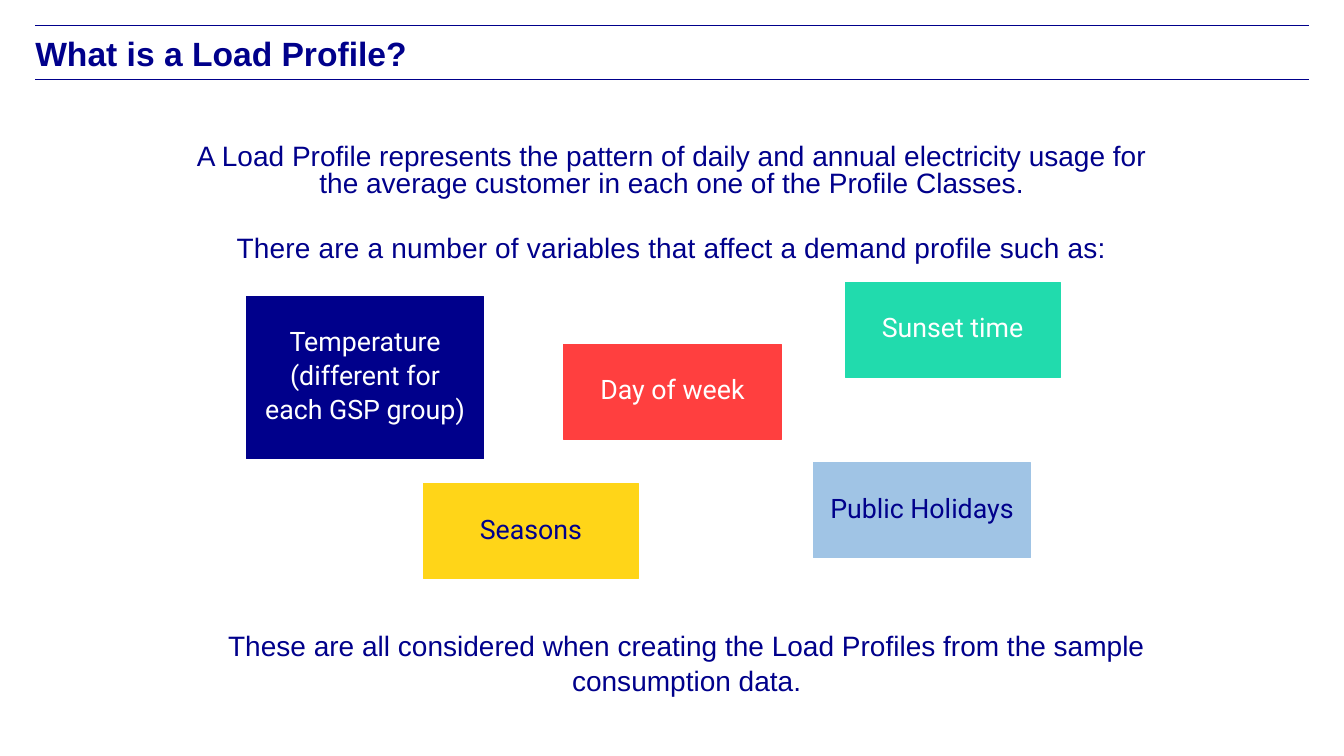
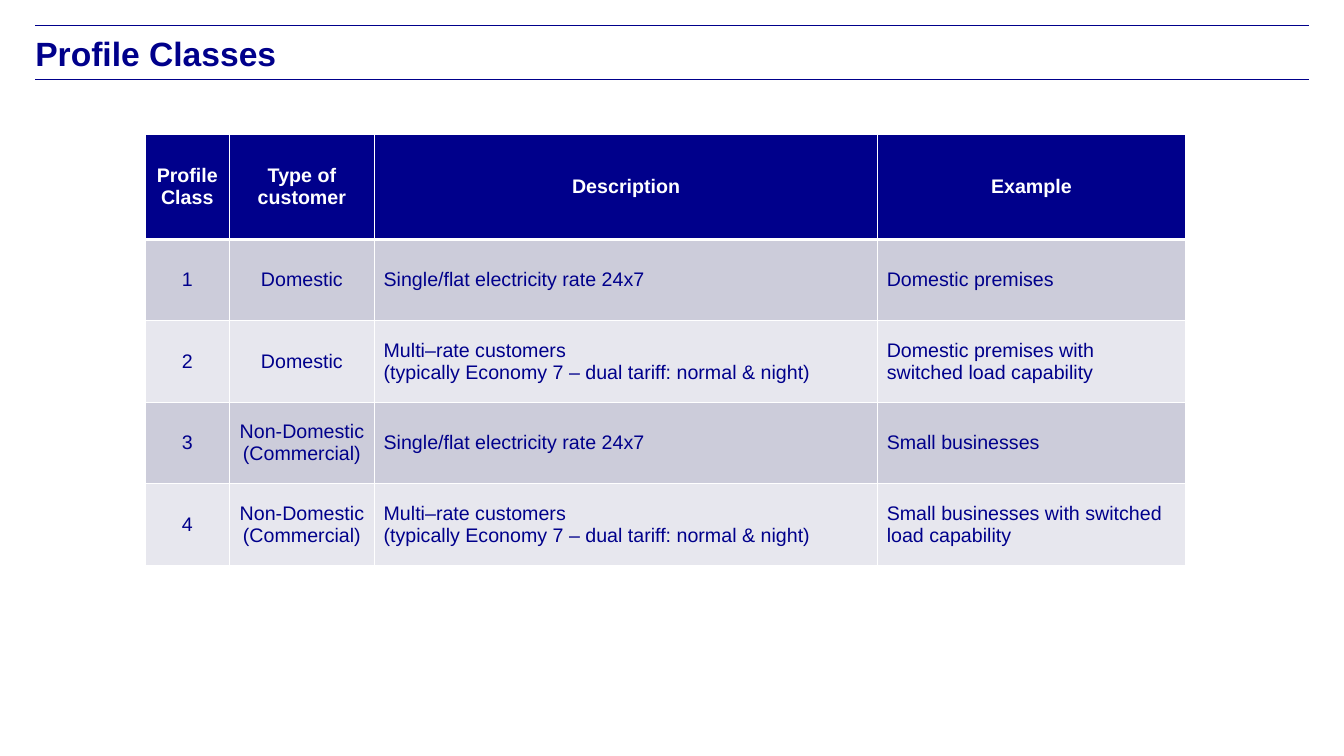
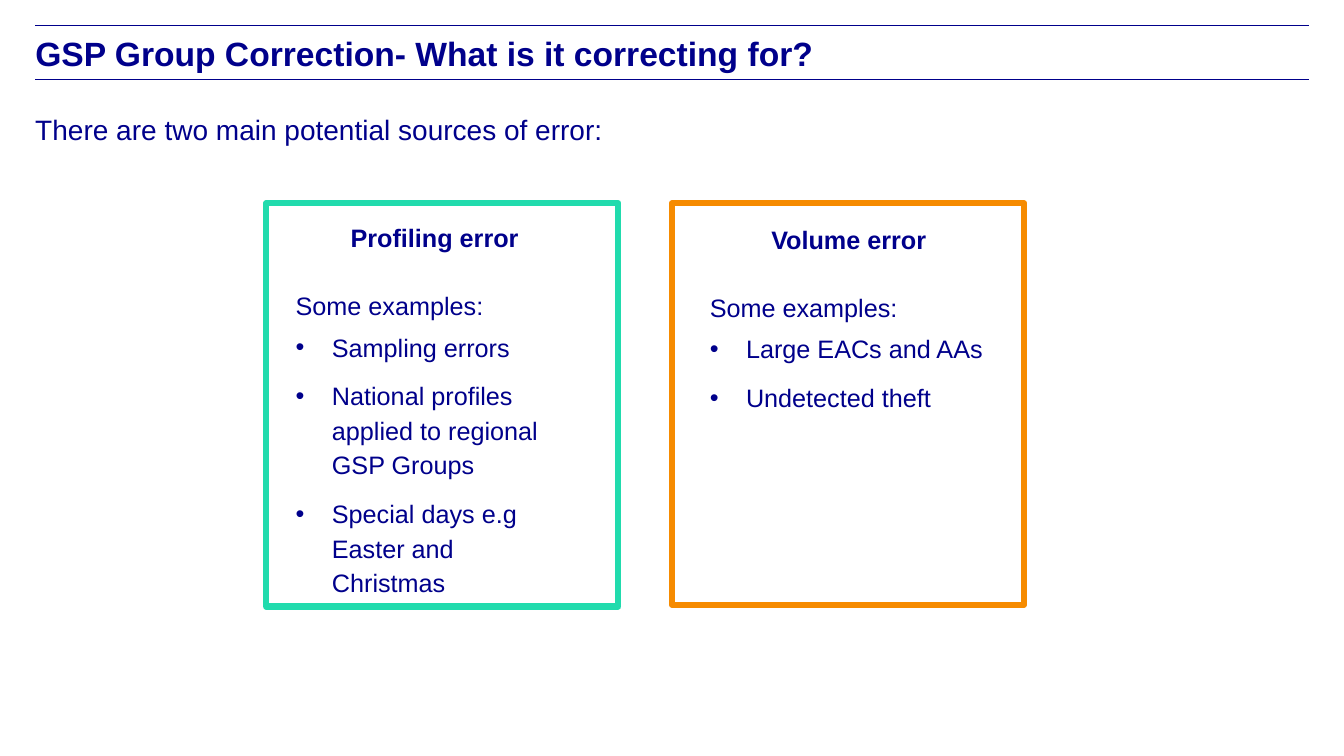
"""Build three slides on load profiles, profile classes and GSP group correction."""
from lxml import etree
from pptx import Presentation
from pptx import util as u
from pptx.dml.color import RGBColor
from pptx.enum import shapes, text
from pptx.oxml.ns import qn

HUES = {"navy": "00008B", "white": "FFFFFF", "green": "21DBAD", "yellow": "FFD518",
        "red": "FF3F3F", "sky": "A0C4E5", "orange": "F68B00",
        "band": "CCCCDA", "pale band": "E7E7EE"}
COLOURS = {name: RGBColor.from_string(value) for name, value in HUES.items()}
LEFT, CENTRE = text.PP_ALIGN.LEFT, text.PP_ALIGN.CENTER
TOP, MIDDLE = text.MSO_ANCHOR.TOP, text.MSO_ANCHOR.MIDDLE
PITCH, GAP = 19.1, 5.1

deck = Presentation()
deck.slide_width, deck.slide_height = u.Inches(13.33), u.Inches(7.5)
COLUMN, ROW = deck.slide_width / 160, deck.slide_height / 90
MARGIN, BODY_WIDTH = 4.2, 151.6


def grid(left, top, width, height):
    """Turn grid columns and rows into a position and a size."""
    return [u.Emu(round(n * unit)) for n, unit in
            ((left, COLUMN), (top, ROW), (width, COLUMN), (height, ROW))]


def write(frame, lines, size, colour="navy", align=LEFT, bold=False, font="Arial",
          anchor=TOP, inset=True, pitch=None, gap=0):
    """Fill a text frame with one paragraph per line and return the paragraphs."""
    frame.word_wrap = True
    frame.vertical_anchor = anchor
    if not inset:
        frame.margin_left = frame.margin_right = frame.margin_top = frame.margin_bottom = 0
    for number, line in enumerate(lines):
        paragraph = frame.add_paragraph() if number else frame.paragraphs[0]
        paragraph.alignment = align
        if pitch:
            paragraph.line_spacing = pitch
        if number and gap:
            paragraph.space_before = u.Pt(gap)
        run = paragraph.add_run()
        run.text = line
        run.font.name, run.font.size, run.font.bold = font, u.Pt(size), bold
        run.font.color.rgb = COLOURS[colour]
    return frame.paragraphs


slides = []
for title in ("What is a Load Profile?", "Profile Classes",
              "GSP Group Correction- What is it correcting for?"):
    slide = deck.slides.add_slide(deck.slide_layouts[6])
    for row in (3, 9.5):
        x, y, width, _ = grid(MARGIN, row, BODY_WIDTH, 0)
        rule = slide.shapes.add_connector(shapes.MSO_CONNECTOR.STRAIGHT, x, y, x + width, y)
        rule.line.color.rgb, rule.line.width = COLOURS["navy"], u.Pt(0.5)
        etree.SubElement(rule._element.spPr, qn("a:effectLst"))
    heading = slide.shapes.add_textbox(*grid(MARGIN, 3.9, BODY_WIDTH, 5.6))
    write(heading.text_frame, [title], 24, bold=True, inset=False)
    slides.append(slide)
profile_slide, classes_slide, correction_slide = slides

definition = profile_slide.shapes.add_textbox(*grid(21.1, 14.2, 117.8, 12.7))
write(definition.text_frame,
      ["A Load Profile represents the pattern of daily and annual electricity usage for "
       "the average customer in each one of the Profile Classes."],
      20, align=CENTRE, anchor=MIDDLE, pitch=u.Pt(PITCH))
lead_in = profile_slide.shapes.add_textbox(*grid(22.3, 26.9, 115.3, 5.5))
lead_line = write(lead_in.text_frame,
                  ["There are a number of variables that affect a demand profile such as:"],
                  20, align=CENTRE)[0]
lead_line.runs[0].font._element.set("spc", "10")
conclusion = profile_slide.shapes.add_textbox(*grid(21.1, 74, 121.3, 9.2))
write(conclusion.text_frame,
      ["These are all considered when creating the Load Profiles from the sample "
       "consumption data."], 20, align=CENTRE, pitch=1.05)

variables = [
    (["Sunset time"], "green", "white", (100.6, 33.6, 25.6, 11.3)),
    (["Seasons"], "yellow", "navy", (50.4, 57.6, 25.6, 11.3)),
    (["Day of week"], "red", "white", (67.1, 41, 25.9, 11.3)),
    (["Public Holidays"], "sky", "navy", (96.8, 55.1, 25.9, 11.3)),
    (["Temperature", "(different for", "each GSP group)"], "navy", "white",
     (29.3, 35.3, 28.3, 19.3)),
]
for lines, fill, ink, place in variables:
    variable = profile_slide.shapes.add_shape(shapes.MSO_SHAPE.RECTANGLE, *grid(*place))
    variable.shadow.inherit = False
    variable.fill.solid()
    variable.fill.fore_color.rgb = variable.line.color.rgb = COLOURS[fill]
    variable.line.width = u.Pt(0.75)
    write(variable.text_frame, lines, PITCH, ink, CENTRE, font="Roboto", anchor=MIDDLE,
          inset=False, pitch=u.Pt(PITCH), gap=GAP)

single_rate = ["Single/flat electricity rate 24x7"]
multi_rate = ["Multi–rate customers", "(typically Economy 7 – dual tariff: normal & night)"]
domestic, commercial = ["Domestic"], ["Non-Domestic (Commercial)"]
classes = [
    (["Profile Class"], ["Type of customer"], ["Description"], ["Example"]),
    (["1"], domestic, single_rate, ["Domestic premises"]),
    (["2"], domestic, multi_rate, ["Domestic premises with switched load capability"]),
    (["3"], commercial, single_rate, ["Small businesses"]),
    (["4"], commercial, multi_rate, ["Small businesses with switched load capability"]),
]
column_widths = (10, 17.3, 59.9, 36.6)
row_heights = (12.5, 9.7, 9.7, 9.7, 9.7)
table = classes_slide.shapes.add_table(
    len(classes), len(column_widths),
    *grid(17.3, 16, sum(column_widths), sum(row_heights))).table
for column, width in zip(table.columns, column_widths):
    column.width = round(width * COLUMN)
for r, (entries, height) in enumerate(zip(classes, row_heights)):
    table.rows[r].height = round(height * ROW)
    header = r == 0
    fill = "navy" if header else "band" if r % 2 else "pale band"
    for c, lines in enumerate(entries):
        cell = table.cell(r, c)
        cell.margin_left = cell.margin_right = u.Inches(0.09)
        cell.vertical_anchor = MIDDLE
        for side in ("lnL", "lnR", "lnT", "lnB"):
            thick = (r, side) in ((0, "lnB"), (1, "lnT"))
            border = etree.SubElement(cell._tc.get_or_add_tcPr(), qn(f"a:{side}"),
                                      w=str(u.Pt(3 if thick else 1)))
            paint = etree.SubElement(border, qn("a:solidFill"))
            etree.SubElement(paint, qn("a:srgbClr"), val=HUES["white"])
        cell.fill.solid()
        cell.fill.fore_color.rgb = COLOURS[fill]
        write(cell.text_frame, lines, 14, "white" if header else "navy",
              CENTRE if header or c < 2 else LEFT, header, anchor=MIDDLE)

intro = correction_slide.shapes.add_textbox(*grid(MARGIN, 14.2, 117.8, 11.3))
write(intro.text_frame, ["There are two main potential sources of error:"], 20,
      inset=False, pitch=u.Pt(PITCH))

errors = [
    ("Profiling error", "green", (31.7, 24.2, 41.9, 48), (35.2, 26.9, 33.1, 44),
     ["Sampling errors", "National profiles applied to regional GSP Groups",
      "Special days e.g Easter and Christmas"]),
    ("Volume error", "orange", (80, 24.2, 41.9, 47.8), (84.5, 27.1, 33.1, 26.6),
     ["Large EACs and AAs", "Undetected theft"]),
]
for name, outline, frame_place, text_place, examples in errors:
    panel = correction_slide.shapes.add_shape(shapes.MSO_SHAPE.RECTANGLE, *grid(*frame_place))
    panel.shadow.inherit = False
    panel.fill.background()
    panel.line.color.rgb, panel.line.width = COLOURS[outline], u.Pt(4.5)
    details = correction_slide.shapes.add_textbox(*grid(*text_place))
    label, prompt, *bullets = write(details.text_frame, [name, "Some examples:", *examples],
                                    18, inset=False, pitch=u.Pt(PITCH))
    label.alignment, label.runs[0].font.bold = CENTRE, True
    label.space_after, prompt.space_after = u.Pt(PITCH + 2 * GAP), u.Pt(GAP)
    for bullet in bullets:
        properties = bullet._p.get_or_add_pPr()
        properties.set("marL", str(u.Inches(0.36)))
        properties.set("indent", str(-u.Inches(0.36)))
        tint = etree.SubElement(properties, qn("a:buClr"))
        etree.SubElement(tint, qn("a:srgbClr"), val=HUES["navy"])
        etree.SubElement(properties, qn("a:buFont"), typeface="Arial")
        etree.SubElement(properties, qn("a:buChar"), char="•")
        bullet.line_spacing, bullet.space_after = 1.14, u.Pt(10.3)

deck.save("out.pptx")
